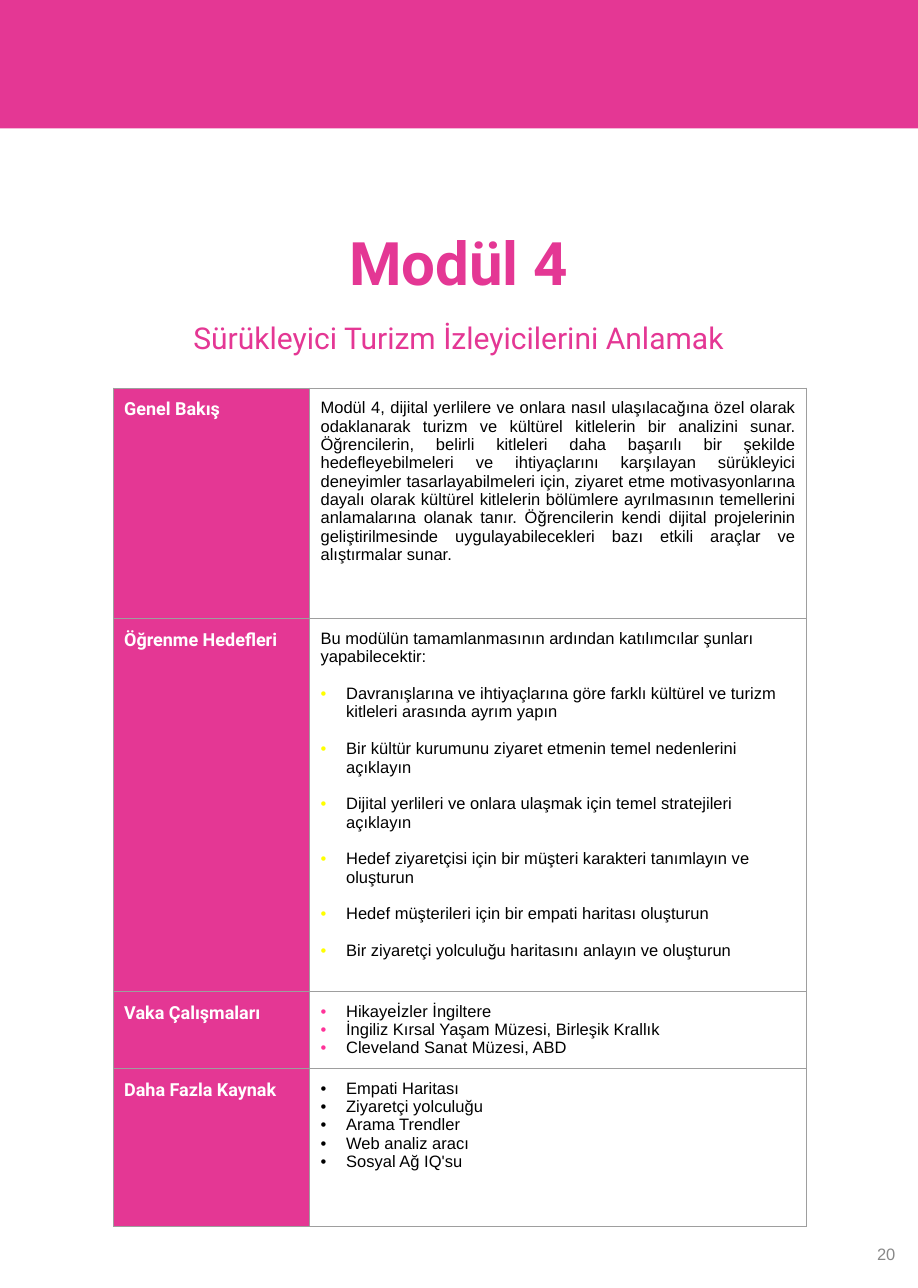
"""Builds the Module 4 overview page with its summary table."""
import pptx
import pptx.dml.color
import pptx.enum.shapes
import pptx.enum.text
import pptx.oxml
import pptx.oxml.ns
import pptx.util

Cm, Pt = pptx.util.Cm, pptx.util.Pt
ALIGN = pptx.enum.text.PP_ALIGN
ANCHOR = pptx.enum.text.MSO_ANCHOR

COLOURS = {
    "pink": "E43794",
    "bright pink": "FF3399",
    "yellow": "FFFF00",
    "black": "000000",
    "white": "FFFFFF",
    "grey": "888888",
    "border": "9E9E9E",
}

HEADINGS = [
    {"text": "Modül 4", "box": (2.79, 5.38, 16, 1.96), "size": 40, "bold": True,
     "font": "Roboto", "colour": "pink", "align": ALIGN.CENTER,
     "anchor": ANCHOR.TOP, "spacing": 0.9},
    {"text": "Sürükleyici Turizm İzleyicilerini Anlamak", "box": (2.79, 7.39, 16, 1.75),
     "size": 20, "bold": False, "font": "Roboto", "colour": "pink",
     "align": ALIGN.CENTER, "anchor": ANCHOR.TOP, "spacing": 1},
    {"text": "20", "box": (13.69, 28.98, 7.62, 1.02), "size": 11, "bold": False,
     "font": "Arial", "colour": "grey", "align": ALIGN.RIGHT,
     "anchor": ANCHOR.MIDDLE, "spacing": 1},
]

SECTIONS = [
    {"label": "Genel Bakış", "height": 5.43, "align": ALIGN.JUSTIFY,
     "intro": ["Modül 4, dijital yerlilere ve onlara nasıl ulaşılacağına özel olarak "
               "odaklanarak turizm ve kültürel kitlelerin bir analizini sunar. "
               "Öğrencilerin, belirli kitleleri daha başarılı bir şekilde "
               "hedefleyebilmeleri ve ihtiyaçlarını karşılayan sürükleyici deneyimler "
               "tasarlayabilmeleri için, ziyaret etme motivasyonlarına dayalı olarak "
               "kültürel kitlelerin bölümlere ayrılmasının temellerini anlamalarına "
               "olanak tanır. Öğrencilerin kendi dijital projelerinin geliştirilmesinde "
               "uygulayabilecekleri bazı etkili araçlar ve alıştırmalar sunar."],
     "bullets": [], "bullet colour": "black", "gap": 0},
    {"label": "Öğrenme Hedefleri", "height": 8.77, "align": ALIGN.LEFT,
     "intro": ["Bu modülün tamamlanmasının ardından katılımcılar şunları yapabilecektir:"],
     "bullets": ["Davranışlarına ve ihtiyaçlarına göre farklı kültürel ve turizm "
                 "kitleleri arasında ayrım yapın",
                 "Bir kültür kurumunu ziyaret etmenin temel nedenlerini açıklayın",
                 "Dijital yerlileri ve onlara ulaşmak için temel stratejileri açıklayın",
                 "Hedef ziyaretçisi için bir müşteri karakteri tanımlayın ve oluşturun",
                 "Hedef müşterileri için bir empati haritası oluşturun",
                 "Bir ziyaretçi yolculuğu haritasını anlayın ve oluşturun"],
     "bullet colour": "yellow", "gap": 12.25},
    {"label": "Vaka Çalışmaları", "height": 1.81, "align": ALIGN.LEFT, "intro": [],
     "bullets": ["Hikayeİzler İngiltere",
                 "İngiliz Kırsal Yaşam Müzesi, Birleşik Krallık",
                 "Cleveland Sanat Müzesi, ABD"],
     "bullet colour": "bright pink", "gap": 0},
    {"label": "Daha Fazla Kaynak", "height": 3.72, "align": ALIGN.LEFT, "intro": [],
     "bullets": ["Empati Haritası", "Ziyaretçi yolculuğu", "Arama Trendler",
                 "Web analiz aracı", "Sosyal Ağ IQ'su"],
     "bullet colour": "black", "gap": 0},
]
COLUMN_WIDTHS = (4.62, 11.68)
TABLE_LEFT, TABLE_TOP = 2.67, 9.13
CELL_MARGIN = 0.25
HANGING = 0.6


def rgb(colour):
    return pptx.dml.color.RGBColor.from_string(COLOURS[colour])


def style(paragraph, size, font, colour, bold=False):
    for run in paragraph.runs:
        run.font.size, run.font.name, run.font.bold = Pt(size), font, bold
        run.font.color.rgb = rgb(colour)


def add_xml(parent, tag, content, attributes=""):
    parent.append(pptx.oxml.parse_xml(
        f'<a:{tag} {pptx.oxml.ns.nsdecls("a")} {attributes}>{content}</a:{tag}>'))


def add_bullet(paragraph, colour):
    properties = paragraph._p.get_or_add_pPr()
    properties.set("marL", str(Cm(HANGING)))
    properties.set("indent", str(-Cm(HANGING)))
    add_xml(properties, "buClr", f'<a:srgbClr val="{COLOURS[colour]}"/>')
    add_xml(properties, "buFont", "", 'typeface="Arial"')
    add_xml(properties, "buChar", "", 'char="•"')


def prepare_cell(cell):
    cell.margin_left = cell.margin_right = Cm(CELL_MARGIN)
    cell.margin_top = cell.margin_bottom = Cm(CELL_MARGIN)
    cell.vertical_anchor = ANCHOR.TOP
    line = f'<a:solidFill><a:srgbClr val="{COLOURS["border"]}"/></a:solidFill>'
    for side in ("lnL", "lnR", "lnT", "lnB"):
        add_xml(cell._tc.get_or_add_tcPr(), side, line, f'w="{Pt(0.75)}"')


def fill_label(cell, label):
    prepare_cell(cell)
    cell.fill.solid()
    cell.fill.fore_color.rgb = rgb("pink")
    cell.text_frame.text = label
    style(cell.text_frame.paragraphs[0], 12, "Roboto", "white", True)


def fill_details(cell, section):
    prepare_cell(cell)
    cell.fill.background()
    intro = section["intro"]
    cell.text_frame.text = "\n".join(intro + section["bullets"])
    for position, paragraph in enumerate(cell.text_frame.paragraphs):
        if position >= len(intro):
            add_bullet(paragraph, section["bullet colour"])
        if position and section["gap"]:
            paragraph.space_before = Pt(section["gap"])
        paragraph.alignment = section["align"]
        style(paragraph, 11, "Arial", "black")


def add_heading(slide, heading):
    frame = slide.shapes.add_textbox(*map(Cm, heading["box"])).text_frame
    frame.word_wrap = True
    frame.vertical_anchor = heading["anchor"]
    frame.text = heading["text"]
    paragraph = frame.paragraphs[0]
    paragraph.alignment = heading["align"]
    paragraph.line_spacing = heading["spacing"]
    style(paragraph, heading["size"], heading["font"], heading["colour"], heading["bold"])


def add_summary(slide):
    height = sum(section["height"] for section in SECTIONS)
    summary = slide.shapes.add_table(
        len(SECTIONS), len(COLUMN_WIDTHS), Cm(TABLE_LEFT), Cm(TABLE_TOP),
        Cm(sum(COLUMN_WIDTHS)), Cm(height)).table
    summary.first_row = summary.horz_banding = False
    for column, width in zip(summary.columns, COLUMN_WIDTHS):
        column.width = Cm(width)
    for row, section in zip(summary.rows, SECTIONS):
        row.height = Cm(section["height"])
        fill_label(row.cells[0], section["label"])
        fill_details(row.cells[1], section)


def main():
    deck = pptx.Presentation()
    deck.slide_width, deck.slide_height = Cm(21.59), Cm(30.3)
    slide = deck.slides.add_slide(deck.slide_layouts[6])
    banner = slide.shapes.add_shape(
        pptx.enum.shapes.MSO_SHAPE.RECTANGLE, 0, 0, deck.slide_width, Cm(3.02))
    banner.shadow.inherit = False
    banner.fill.solid()
    banner.fill.fore_color.rgb = rgb("pink")
    banner.line.fill.background()
    add_summary(slide)
    for heading in HEADINGS:
        add_heading(slide, heading)
    deck.save("out.pptx")


if __name__ == "__main__":
    main()
